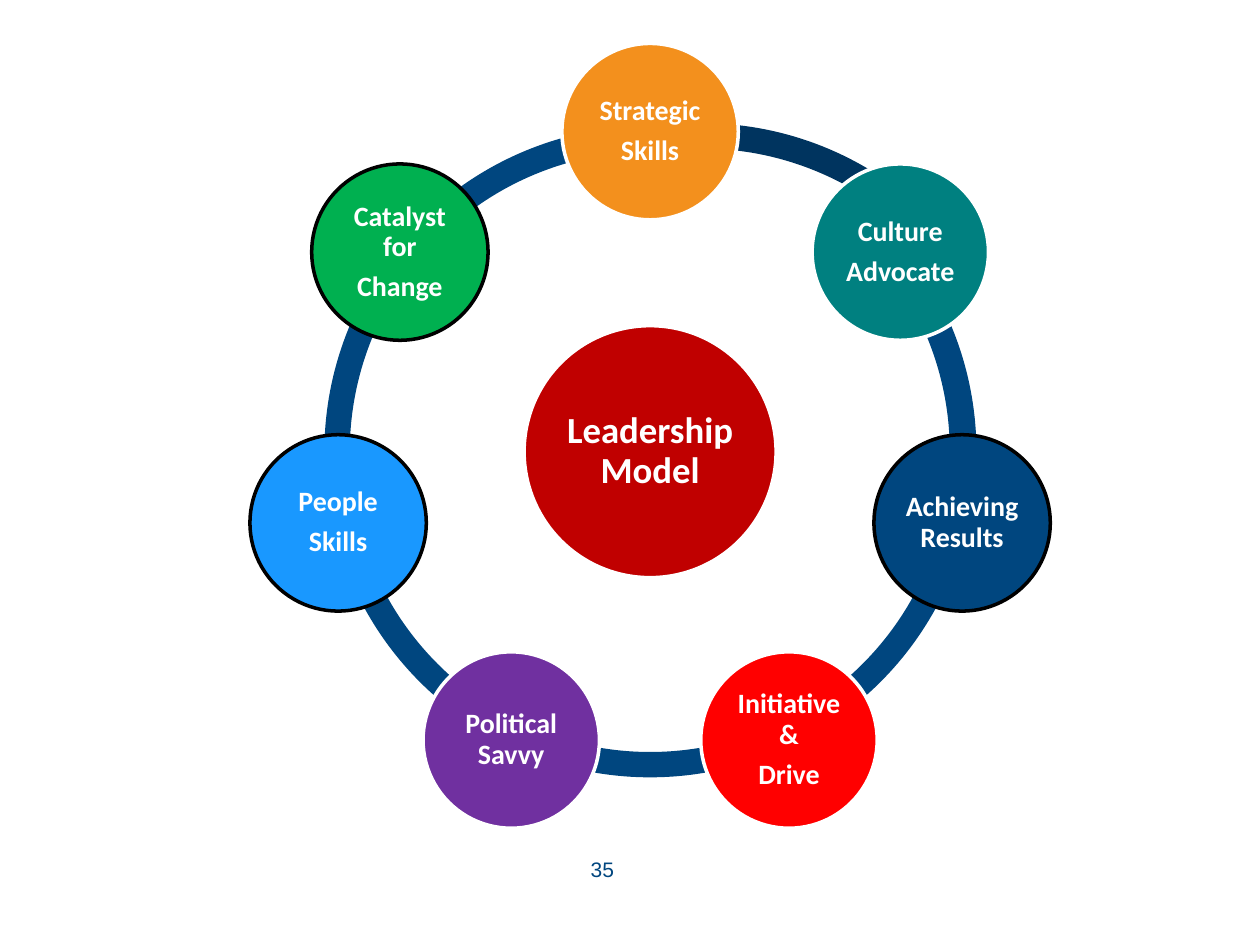
from dataclasses import dataclass
from math import cos, radians, sin

from pptx import Presentation
from pptx.dml.color import RGBColor
from pptx.enum.shapes import MSO_SHAPE
from pptx.enum.text import MSO_ANCHOR, PP_ALIGN
from pptx.slide import Slide
from pptx.util import Inches, Pt

SLIDE_WIDTH, SLIDE_HEIGHT = Inches(10), Inches(7.5)

WHITE = RGBColor(0xFF, 0xFF, 0xFF)
BLACK = RGBColor(0x00, 0x00, 0x00)
NAVY = RGBColor(0x00, 0x46, 0x7F)
DARK_NAVY = RGBColor(0x00, 0x34, 0x5F)
DARK_RED = RGBColor(0xC0, 0x00, 0x00)
ORANGE = RGBColor(0xF3, 0x90, 0x1D)
TEAL = RGBColor(0x00, 0x80, 0x80)
RED = RGBColor(0xFF, 0x00, 0x00)
PURPLE = RGBColor(0x70, 0x30, 0xA0)
SKY_BLUE = RGBColor(0x19, 0x98, 0xFF)
GREEN = RGBColor(0x00, 0xB0, 0x50)

# Shares of the slide's width, except the y values, which are of its height
CENTRE_X, CENTRE_Y = 0.516, 0.478
ORBIT_RADIUS = 0.254
RING_DIAMETER = 0.517
RING_THICKNESS = 0.039
HUB_DIAMETER = 0.2
SKILL_DIAMETER = 0.14
TOP_ANGLE = 270
ADJUSTMENT_PER_DEGREE = 0.6


@dataclass(frozen=True)
class Disc:
    paragraphs: tuple[str, ...]
    fill: RGBColor
    outline: RGBColor = WHITE
    diameter: float = SKILL_DIAMETER
    font_size: int = 16
    inset: float = 0.02


@dataclass(frozen=True)
class Arc:
    color: RGBColor = NAVY
    shift_x: float = 0
    shift_y: float = 0
    outlined: bool = False


HUB = Disc(("Leadership Model",), DARK_RED, diameter=HUB_DIAMETER,
           font_size=21, inset=0.03)

# Clockwise from the top
SKILLS = (
    Disc(("Strategic", "Skills"), ORANGE),
    Disc(("Culture", "Advocate"), TEAL),
    Disc(("Achieving Results",), NAVY, BLACK),
    Disc(("Initiative &", "Drive"), RED),
    Disc(("Political Savvy",), PURPLE),
    Disc(("People", "Skills"), SKY_BLUE, BLACK),
    Disc(("Catalyst for", "Change"), GREEN, BLACK),
)
# Each arc leads from the skill of the same index to the next one
ARCS = (
    Arc(DARK_NAVY, shift_x=0.041, shift_y=-0.003),
    Arc(outlined=True),
    *[Arc()] * 5,
)
STEP = 360 / len(SKILLS)


def add_round(slide: Slide, preset: MSO_SHAPE, x: float, y: float,
              diameter: float, fill: RGBColor):
    """Add a filled shape with its centre at the given shares of the slide."""
    size = int(SLIDE_WIDTH * diameter)
    left = int(SLIDE_WIDTH * x - size / 2)
    top = int(SLIDE_HEIGHT * y - size / 2)
    shape = slide.shapes.add_shape(preset, left, top, size, size)
    shape.shadow.inherit = False
    shape.fill.solid()
    shape.fill.fore_color.rgb = fill
    return shape


def add_arc(slide: Slide, arc: Arc, start: float) -> None:
    segment = add_round(slide, MSO_SHAPE.BLOCK_ARC, CENTRE_X + arc.shift_x,
                        CENTRE_Y + arc.shift_y, RING_DIAMETER, arc.color)
    segment.adjustments[0] = start % 360 * ADJUSTMENT_PER_DEGREE
    segment.adjustments[1] = (start + STEP) % 360 * ADJUSTMENT_PER_DEGREE
    segment.adjustments[2] = RING_THICKNESS
    if arc.outlined:
        segment.line.color.rgb = arc.color
        segment.line.width = Pt(0.75)
    else:
        segment.line.fill.background()


def add_disc(slide: Slide, disc: Disc, x: float, y: float) -> None:
    circle = add_round(slide, MSO_SHAPE.OVAL, x, y, disc.diameter, disc.fill)
    circle.line.color.rgb = disc.outline
    circle.line.width = Pt(2)
    frame = circle.text_frame
    frame.word_wrap = True
    frame.vertical_anchor = MSO_ANCHOR.MIDDLE
    frame.margin_left = frame.margin_right = Inches(disc.inset)
    frame.margin_top = frame.margin_bottom = Inches(disc.inset)
    for index, wording in enumerate(disc.paragraphs):
        paragraph = frame.add_paragraph() if index else frame.paragraphs[0]
        paragraph.alignment = PP_ALIGN.CENTER
        paragraph.line_spacing = 0.9
        paragraph.space_after = Pt(0.35 * disc.font_size)
        run = paragraph.add_run()
        run.text = wording
        run.font.name = "Calibri"
        run.font.size = Pt(disc.font_size)
        run.font.bold = True
        run.font.color.rgb = WHITE


def add_page_number(slide: Slide, number: str) -> None:
    box = slide.shapes.add_textbox(
        int(SLIDE_WIDTH * 0.459), int(SLIDE_HEIGHT * 0.9),
        int(SLIDE_WIDTH * 0.233), int(SLIDE_HEIGHT * 0.053))
    box.text_frame.word_wrap = True
    run = box.text_frame.paragraphs[0].add_run()
    run.text = number
    run.font.name = "Arial"
    run.font.size = Pt(12)
    run.font.color.rgb = NAVY


def main() -> None:
    presentation = Presentation()
    presentation.slide_width = SLIDE_WIDTH
    presentation.slide_height = SLIDE_HEIGHT
    slide = presentation.slides.add_slide(presentation.slide_layouts[6])

    for index, arc in reversed(list(enumerate(ARCS))):
        add_arc(slide, arc, TOP_ANGLE + index * STEP)

    add_disc(slide, HUB, CENTRE_X, CENTRE_Y)
    aspect = SLIDE_WIDTH / SLIDE_HEIGHT
    for index, skill in enumerate(SKILLS):
        angle = radians(TOP_ANGLE + index * STEP)
        add_disc(slide, skill, CENTRE_X + ORBIT_RADIUS * cos(angle),
                 CENTRE_Y + ORBIT_RADIUS * aspect * sin(angle))

    add_page_number(slide, "35")
    presentation.save("out.pptx")


if __name__ == "__main__":
    main()
